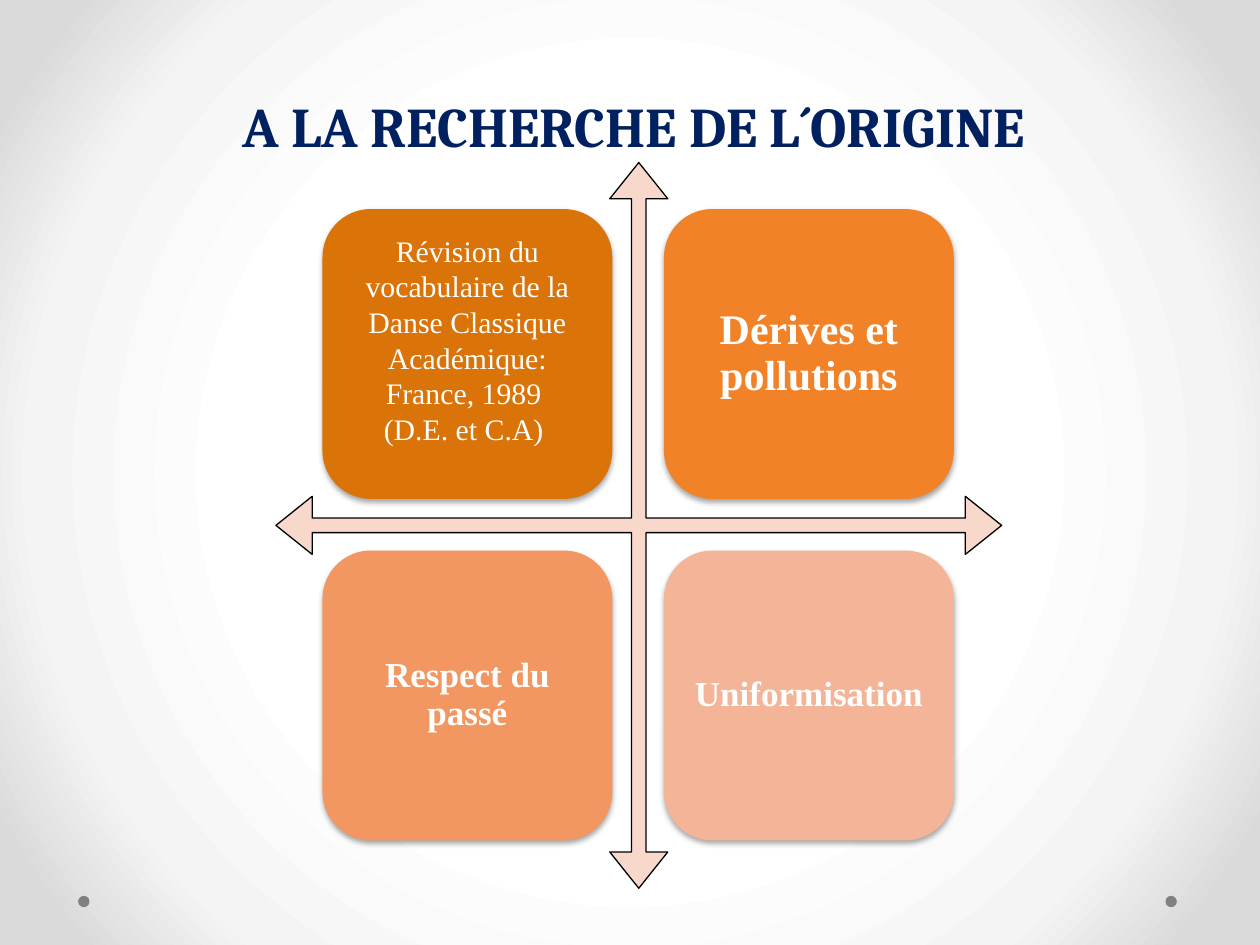
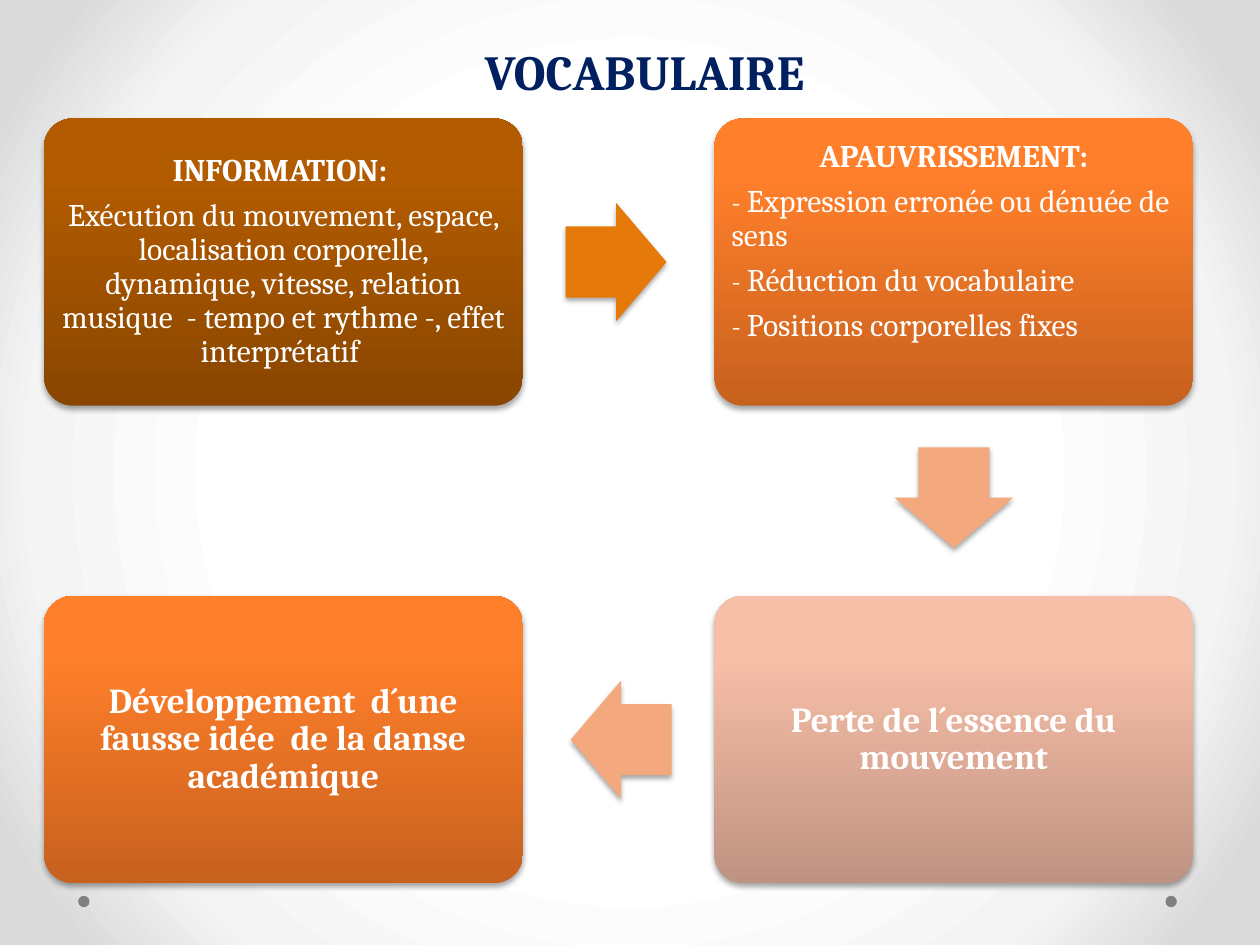
from dataclasses import dataclass, field
from itertools import product

from lxml.etree import SubElement
from pptx import Presentation
from pptx.dml.color import RGBColor
from pptx.enum.shapes import MSO_SHAPE as Shape
from pptx.enum.text import MSO_ANCHOR as Anchor, MSO_AUTO_SIZE as AutoSize, PP_ALIGN as Align
from pptx.oxml.ns import qn
from pptx.util import Emu, Pt

EMU_PER_PX = 9144
PAGE_WIDTH, PAGE_HEIGHT = 1000, 750

Stops = tuple[tuple[int, str], ...]


@dataclass(frozen=True)
class Theme:
    heading_font: str = "Cambria"
    tile_font: str = "Times New Roman"
    title: str = "002060"
    text: str = "FFFFFF"
    dot: str = "808080"
    outline: str = "000000"
    cross: str = "F9D8CC"
    arrow_first: str = "E57909"
    arrow_next: str = "F4A87E"
    tiles: tuple[str, ...] = ("DA7308", "F28228", "F29761", "F4B497")
    backdrop: Stops = ((50, "FFFFFF"), (76, "F4F4F4"), (92, "DADADA"))
    brown: Stops = ((0, "894600"), (80, "B25B00"), (100, "B35C00"))
    orange: Stops = ((0, "C7611E"), (80, "FF7F2A"), (100, "FF802C"))
    pink: Stops = ((0, "BF9382"), (80, "F8BFA8"), (100, "FBBFA7"))
    title_large: int = 32
    title_small: int = 28
    accent: int = 24
    strong: int = 20
    body: int = 18
    note: int = 17
    dash: int = 16


THEME = Theme()


@dataclass(frozen=True)
class Span:
    text: str
    size: int
    bold: bool = False


@dataclass(frozen=True)
class Para:
    spans: tuple[Span, ...]
    align: Align = Align.CENTER
    line: float = 0.9
    after: float = 6.3


@dataclass(frozen=True)
class Grid:
    left: int
    top: int
    width: int
    height: int
    column_step: int
    row_step: int

    def cells(self) -> list[tuple[int, int, int, int]]:
        return [
            (self.left + column * self.column_step, self.top + row * self.row_step,
             self.width, self.height)
            for row, column in product(range(2), repeat=2)
        ]


@dataclass(frozen=True)
class Card:
    fill: str | Stops
    paras: tuple[Para, ...]
    inset: int
    extra_bottom: int = field(default=0)


@dataclass(frozen=True)
class Arrow:
    left: int
    top: int
    rotation: int
    fill: str


def px(length: int) -> Emu:
    return Emu(length * EMU_PER_PX)


def strong_para(text: str, size: int) -> Para:
    return Para((Span(text, size, True),))


def dash_para(text: str) -> Para:
    return Para((Span("- ", THEME.dash), Span(text, THEME.body)), Align.LEFT)


def add_span(para, text: str, *, size: int, font: str, color: str, bold: bool = False) -> None:
    span = para.add_run()
    span.text = text
    span.font.size = Pt(size)
    span.font.name = font
    span.font.bold = bold
    span.font.color.rgb = RGBColor.from_string(color)


def set_gradient(fill, element, stops: Stops, radial: bool = False) -> None:
    fill.gradient()
    gradient = element.find(".//" + qn("a:gradFill"))
    for child in list(gradient):
        gradient.remove(child)
    stop_list = SubElement(gradient, qn("a:gsLst"))
    for position, color in stops:
        stop = SubElement(stop_list, qn("a:gs"), pos=str(position * 1000))
        SubElement(stop, qn("a:srgbClr"), val=color)
    if radial:
        circle = SubElement(gradient, qn("a:path"), path="circle")
        SubElement(circle, qn("a:fillToRect"), l="50000", t="50000", r="50000", b="50000")
    else:
        SubElement(gradient, qn("a:lin"), ang="16200000", scaled="0")


def add_shadow(box) -> None:
    effects = box._element.spPr.find(qn("a:effectLst"))
    shadow = SubElement(effects, qn("a:outerShdw"), blurRad=str(Pt(3.1)), dist=str(Pt(1.8)),
                        dir="5400000", rotWithShape="0")
    color = SubElement(shadow, qn("a:srgbClr"), val="000000")
    SubElement(color, qn("a:alpha"), val="35000")


def add_box(page, kind: Shape, place: tuple[int, int, int, int], fill: str | Stops,
            adjustments: tuple[float, ...] = (), shadow: bool = False):
    box = page.shapes.add_shape(kind, *map(px, place))
    for index, value in enumerate(adjustments):
        box.adjustments[index] = value
    if isinstance(fill, str):
        box.fill.solid()
        box.fill.fore_color.rgb = RGBColor.from_string(fill)
    else:
        set_gradient(box.fill, box._element, fill)
    box.line.fill.background()
    box.shadow.inherit = False
    if shadow:
        add_shadow(box)
    return box


def add_card(page, card: Card, place: tuple[int, int, int, int], radius: float, font: str) -> None:
    box = add_box(page, Shape.ROUNDED_RECTANGLE, place, card.fill, (radius,), shadow=True)
    frame = box.text_frame
    frame.word_wrap = True
    frame.vertical_anchor = Anchor.MIDDLE
    frame.margin_left = frame.margin_right = frame.margin_top = px(card.inset)
    frame.margin_bottom = px(card.inset + card.extra_bottom)
    for index, content in enumerate(card.paras):
        para = frame.add_paragraph() if index else frame.paragraphs[0]
        para.alignment = content.align
        para.line_spacing = content.line
        para.space_after = Pt(content.after)
        for span in content.spans:
            add_span(para, span.text, size=span.size, font=font, color=THEME.text, bold=span.bold)


def add_title(page, text: str, place: tuple[int, int, int, int], size: int) -> None:
    frame = page.shapes.add_textbox(*map(px, place)).text_frame
    frame.word_wrap = True
    frame.auto_size = AutoSize.SHAPE_TO_FIT_TEXT
    para = frame.paragraphs[0]
    para.alignment = Align.CENTER
    add_span(para, text, size=size, font=THEME.heading_font, color=THEME.title, bold=True)


def add_page(deck):
    page = deck.slides.add_slide(deck.slide_layouts[6])
    set_gradient(page.background.fill, page._element, THEME.backdrop, radial=True)
    for left in (925, 62):
        add_box(page, Shape.OVAL, (left, 711, 9, 9), THEME.dot)
    return page


def build_origin(deck) -> None:
    page = add_page(deck)
    cross = add_box(page, Shape.QUAD_ARROW, (219, 129, 576, 576), THEME.cross, (0.02, 0.04, 0.05))
    cross.line.color.rgb = RGBColor.from_string(THEME.outline)
    cross.line.width = Pt(0.75)
    revision = tuple(
        Para((Span(text, THEME.note),), line=1.0, after=0)
        for text in (
            "Révision du vocabulaire de la Danse Classique Académique: France, 1989 ",
            "(D.E. et C.A) ",
        )
    )
    first, second, third, fourth = THEME.tiles
    cards = (
        Card(first, revision, 7, 23),
        Card(second, (strong_para("Dérives et pollutions", THEME.accent),), 10),
        Card(third, (strong_para("Respect du passé", THEME.strong),), 8),
        Card(fourth, (strong_para("Uniformisation", THEME.strong),), 8),
    )
    for card, place in zip(cards, Grid(256, 166, 230, 230, 271, 271).cells()):
        add_card(page, card, place, 0.1667, THEME.tile_font)
    add_title(page, "A LA RECHERCHE DE L´ORIGINE", (55, 68, 897, 64), THEME.title_large)


def build_vocabulary(deck) -> None:
    page = add_page(deck)
    information = (
        strong_para("INFORMATION: ", THEME.body),
        Para((Span(
            "Exécution du mouvement, espace, localisation corporelle, dynamique, vitesse, "
            "relation musique  - tempo et rythme -, effet interprétatif ", THEME.body),)),
    )
    impoverishment = (
        strong_para("APAUVRISSEMENT:", THEME.body),
        dash_para("Expression erronée ou dénuée de sens"),
        dash_para("Réduction du vocabulaire"),
        dash_para("Positions corporelles fixes"),
    )
    false_idea = strong_para("Développement  d´une fausse idée  de la danse académique", THEME.strong)
    cards = (
        Card(THEME.brown, information, 7),
        Card(THEME.orange, impoverishment, 7, 32),
        Card(THEME.orange, (false_idea,), 8),
        Card(THEME.pink, (strong_para("Perte de l´essence du mouvement", THEME.strong),), 8),
    )
    for card, place in zip(cards, Grid(35, 94, 380, 228, 532, 379).cells()):
        add_card(page, card, place, 0.1, THEME.heading_font)
    arrows = (
        Arrow(449, 161, 0, THEME.arrow_first),
        Arrow(717, 348, 90, THEME.arrow_next),
        Arrow(453, 540, 180, THEME.arrow_next),
    )
    for arrow in arrows:
        box = add_box(page, Shape.RIGHT_ARROW, (arrow.left, arrow.top, 80, 94), arrow.fill,
                      (0.6, 0.5), shadow=True)
        box.rotation = arrow.rotation
    add_title(page, "VOCABULAIRE", (322, 28, 379, 57), THEME.title_small)


def main() -> None:
    deck = Presentation()
    deck.slide_width, deck.slide_height = px(PAGE_WIDTH), px(PAGE_HEIGHT)
    build_origin(deck)
    build_vocabulary(deck)
    deck.save("out.pptx")


if __name__ == "__main__":
    main()
